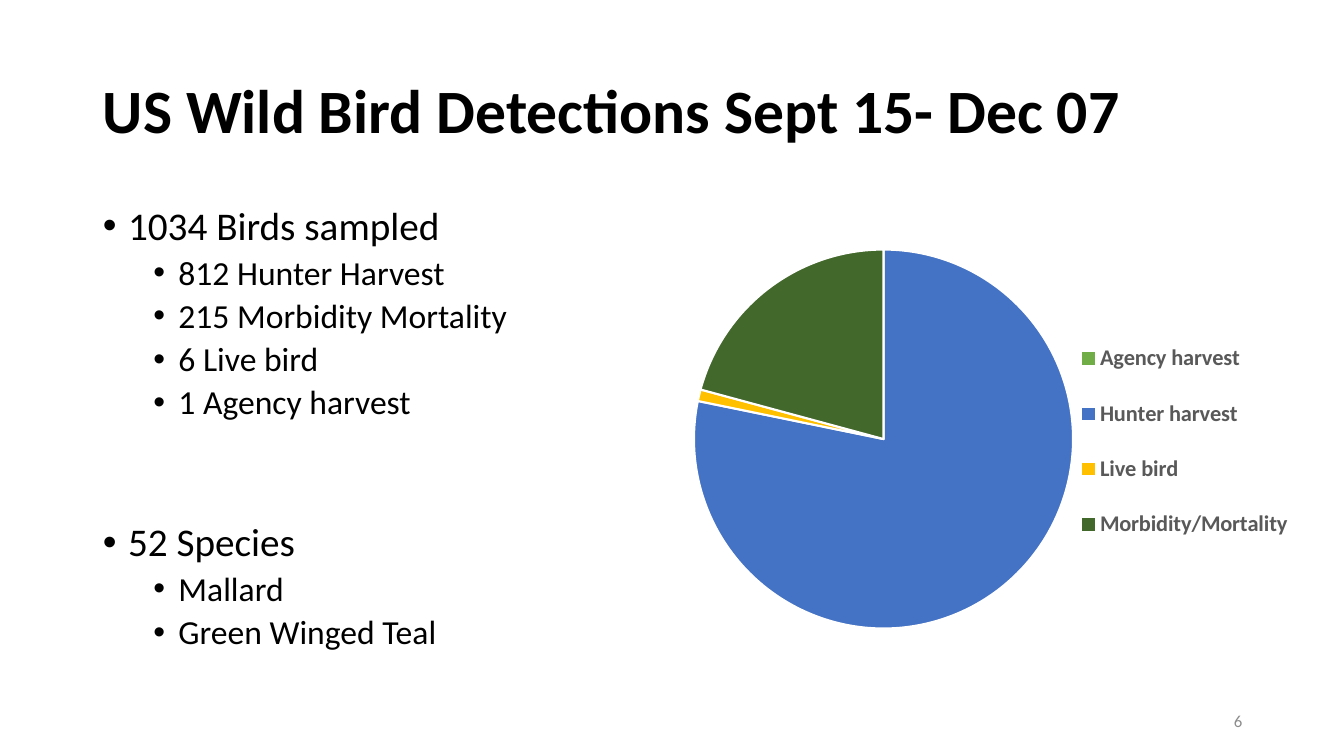
from lxml import etree
from pptx import Presentation
from pptx.chart.data import CategoryChartData
from pptx.dml.color import RGBColor
from pptx.enum.chart import XL_CHART_TYPE, XL_LEGEND_POSITION
from pptx.enum.text import MSO_ANCHOR, MSO_AUTO_SIZE, PP_ALIGN
from pptx.oxml import parse_xml
from pptx.oxml.ns import nsdecls, qn
from pptx.util import Inches, Pt

FONT = "Calibri"
BLACK = RGBColor(0x00, 0x00, 0x00)
WHITE = RGBColor(0xFF, 0xFF, 0xFF)
LEGEND_GRAY = RGBColor(0x59, 0x59, 0x59)
NUMBER_GRAY = RGBColor(0x8C, 0x8C, 0x8C)

# Share of sampled birds in percent, and slice colour
DETECTIONS = {
    "Agency harvest": (0, RGBColor(0x70, 0xAD, 0x47)),
    "Hunter harvest": (79, RGBColor(0x44, 0x72, 0xC4)),
    "Live bird": (1, RGBColor(0xFF, 0xC0, 0x00)),
    "Morbidity/Mortality": (21, RGBColor(0x43, 0x68, 0x2B)),
}
# Heading, space before it, sub-items
FINDINGS = [
    ("1034 Birds sampled", 0, ["812 Hunter Harvest", "215 Morbidity Mortality",
                               "6 Live bird", "1 Agency harvest"]),
    ("52 Species", 72, ["Mallard", "Green Winged Teal"]),
]


def place(shape, box):
    shape.left, shape.top, shape.width, shape.height = (Inches(v) for v in box)


def style(font, size, color, bold=False):
    font.name, font.size, font.bold = FONT, Pt(size), bold
    font.color.rgb = color


def fill_title(title, box):
    place(title, box)
    frame = title.text_frame
    frame.text = "US Wild Bird Detections Sept 15- Dec 07"
    frame.auto_size = MSO_AUTO_SIZE.NONE
    frame.vertical_anchor = MSO_ANCHOR.MIDDLE
    heading = frame.paragraphs[0]
    heading.alignment = PP_ALIGN.LEFT
    heading.line_spacing = 0.9
    style(heading.runs[0].font, 44, BLACK, bold=True)


def format_bullet(paragraph, text, level, size, space_before):
    paragraph.text = text
    paragraph.level = level
    properties = paragraph._p.get_or_add_pPr()
    properties.set("marL", str(Inches(0.25 + 0.5 * level)))
    properties.set("indent", str(Inches(-0.25)))
    etree.SubElement(properties, qn("a:buFont"), typeface="Arial")
    etree.SubElement(properties, qn("a:buChar"), char="•")
    paragraph.line_spacing = 0.9
    paragraph.space_before = Pt(space_before)
    style(paragraph.runs[0].font, size, BLACK)


def fill_findings(body, box):
    place(body, box)
    frame = body.text_frame
    frame.auto_size = MSO_AUTO_SIZE.NONE
    bullets = []
    for heading, space_before, details in FINDINGS:
        bullets.append((heading, 0, 28, space_before))
        bullets += [(detail, 1, 24, 5) for detail in details]
    for index, bullet in enumerate(bullets):
        paragraph = frame.add_paragraph() if index else frame.paragraphs[0]
        format_bullet(paragraph, *bullet)


def manual_layout(x, y, w, h, inner=False):
    """Chart layout element, with lengths as fractions of the chart."""
    target = '<c:layoutTarget val="inner"/>' if inner else ""
    return parse_xml(
        f'<c:layout {nsdecls("c")}><c:manualLayout>{target}'
        '<c:xMode val="edge"/><c:yMode val="edge"/>'
        f'<c:x val="{x}"/><c:y val="{y}"/><c:w val="{w}"/><c:h val="{h}"/>'
        '</c:manualLayout></c:layout>')


def set_layout(plot_area, legend):
    for old in plot_area.findall(qn("c:layout")):
        plot_area.remove(old)
    plot_area.insert(0, manual_layout(0.02, 0.1, 0.6, 0.79, inner=True))
    for old in legend.findall(qn("c:layout")):
        legend.remove(old)
    legend.find(qn("c:legendPos")).addnext(manual_layout(0.61, 0.24, 0.37, 0.52))


def add_detection_pie(slide, box):
    data = CategoryChartData()
    data.categories = list(DETECTIONS)
    data.add_series("Series 1", [share for share, _ in DETECTIONS.values()])
    chart = slide.shapes.add_chart(
        XL_CHART_TYPE.PIE, *(Inches(v) for v in box), data).chart
    style(chart.font, 10, BLACK)
    chart.has_title = False
    chart.has_legend = True
    chart.legend.position = XL_LEGEND_POSITION.RIGHT
    chart.legend.include_in_layout = False
    style(chart.legend.font, 16, LEGEND_GRAY, bold=True)
    plot = chart.plots[0]
    plot.vary_by_categories = True
    for index, (_, color) in enumerate(DETECTIONS.values()):
        slice_format = plot.series[0].points[index].format
        slice_format.fill.solid()
        slice_format.fill.fore_color.rgb = color
        slice_format.line.color.rgb = WHITE
        slice_format.line.width = Pt(1.5)
    set_layout(chart._chartSpace.chart.plotArea, chart.legend._element)


def add_slide_number(slide, box):
    frame = slide.shapes.add_textbox(*(Inches(v) for v in box)).text_frame
    frame.word_wrap = True
    frame.vertical_anchor = MSO_ANCHOR.MIDDLE
    frame.text = "6"
    number = frame.paragraphs[0]
    number.alignment = PP_ALIGN.RIGHT
    style(number.runs[0].font, 12, NUMBER_GRAY)


def main():
    deck = Presentation()
    deck.slide_width, deck.slide_height = Inches(13.33), Inches(7.5)
    slide = deck.slides.add_slide(deck.slide_layouts[1])
    fill_title(slide.shapes.title, (0.92, 0.4, 11.5, 1.45))
    fill_findings(slide.placeholders[1], (0.92, 2, 5.67, 4.76))
    add_slide_number(slide, (9.42, 6.95, 3, 0.4))
    add_detection_pie(slide, (6.75, 2, 6.29, 4.76))
    deck.save("out.pptx")


if __name__ == "__main__":
    main()
